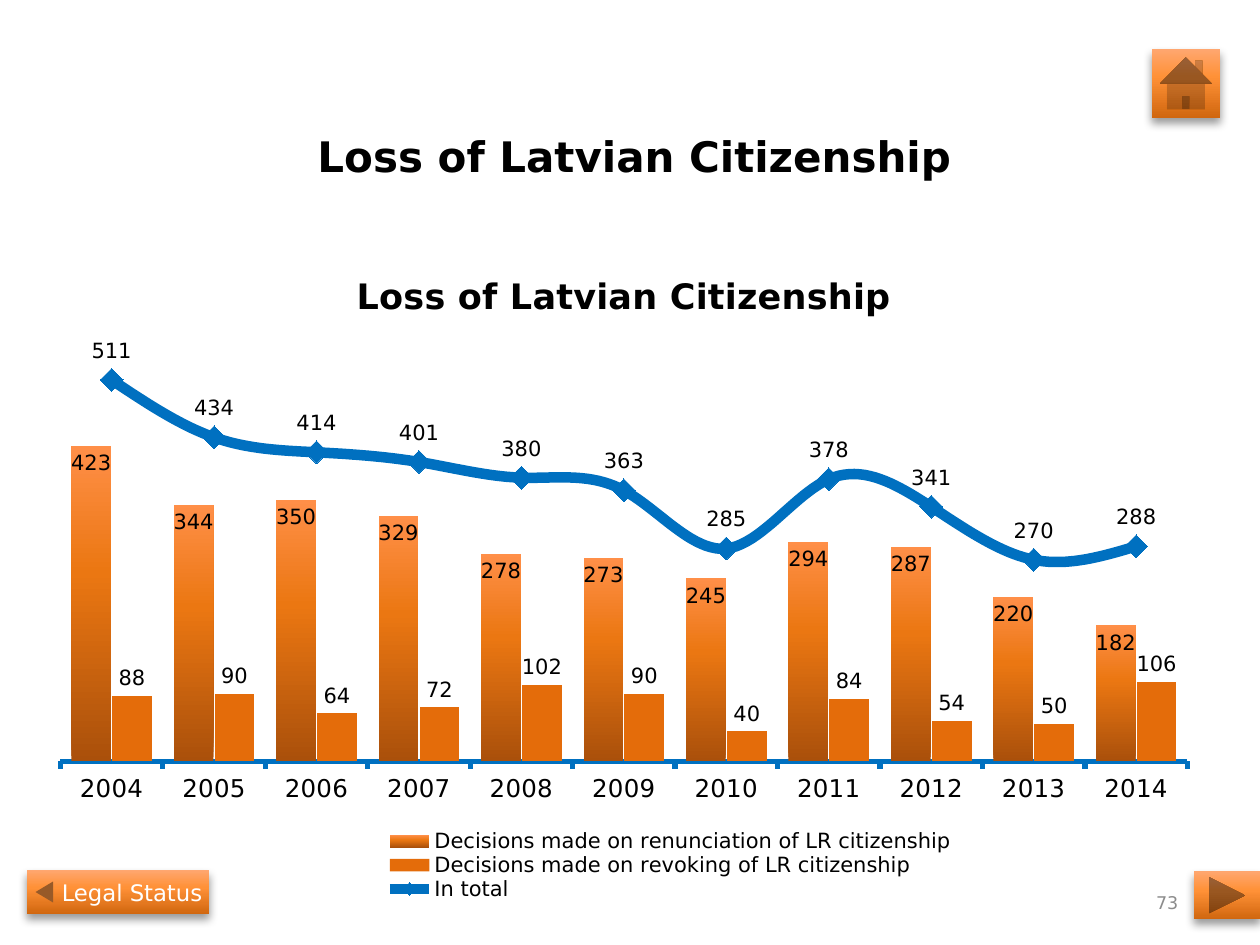
"""Build the slide on loss of Latvian citizenship, 2004 to 2014."""
from copy import deepcopy
from dataclasses import dataclass

from lxml.etree import SubElement
from pptx import Presentation
from pptx.chart.chart import Chart
from pptx.chart.data import CategoryChartData
from pptx.dml.color import RGBColor
from pptx.dml.fill import FillFormat
from pptx.enum.chart import (XL_CHART_TYPE, XL_LABEL_POSITION, XL_LEGEND_POSITION,
                             XL_MARKER_STYLE, XL_TICK_MARK)
from pptx.enum.shapes import MSO_SHAPE
from pptx.enum.text import MSO_ANCHOR, MSO_AUTO_SIZE, PP_ALIGN
from pptx.oxml import parse_xml
from pptx.oxml.ns import nsdecls, qn
from pptx.slide import Slide
from pptx.text.text import Font
from pptx.util import Pt

FONT = "DejaVu Sans"
HEADING = "Loss of Latvian Citizenship"
COLORS = {
    "text": "000000", "white": "FFFFFF", "number": "8C8C8C",
    "total": "0070C0", "revoking": "E46C0A", "arrow": "985A28",
}
BUTTON_GRADIENT = ((0, "D1670F"), (0.6, "FF9137"), (1, "FFA770"))
RENUNCIATION_GRADIENT = ((0, "AA500B"), (0.6, "EB7712"), (1, "FF8F48"))


@dataclass(frozen=True)
class Measure:
    name: str
    values: tuple[int, ...]
    label_position: XL_LABEL_POSITION


@dataclass(frozen=True)
class Button:
    preset: MSO_SHAPE
    box: tuple[float, float, float, float]
    caption: str = ""


YEARS = [str(year) for year in range(2004, 2015)]
MEASURES = (
    Measure("Decisions made on renunciation of LR citizenship",
            (423, 344, 350, 329, 278, 273, 245, 294, 287, 220, 182),
            XL_LABEL_POSITION.INSIDE_END),
    Measure("Decisions made on revoking of LR citizenship",
            (88, 90, 64, 72, 102, 90, 40, 84, 54, 50, 106),
            XL_LABEL_POSITION.OUTSIDE_END),
    Measure("In total",
            (511, 434, 414, 401, 380, 363, 285, 378, 341, 270, 288),
            XL_LABEL_POSITION.ABOVE),
)
BUTTONS = (
    Button(MSO_SHAPE.ACTION_BUTTON_HOME, (658.1, 28.1, 39.2, 39.2)),
    Button(MSO_SHAPE.ACTION_BUTTON_CUSTOM, (15.3, 497.2, 104.2, 25), "Legal Status"),
    Button(MSO_SHAPE.ACTION_BUTTON_FORWARD_OR_NEXT, (682.3, 497.9, 37.7, 27.4)),
)


def rgb(key: str) -> RGBColor:
    """Return a named colour."""
    return RGBColor.from_string(COLORS[key])


def style_font(font: Font, size: float, color: str = "text", bold: bool = False) -> None:
    """Apply the slide typeface with a size and colour."""
    font.name, font.size, font.bold = FONT, Pt(size), bold
    font.color.rgb = rgb(color)


def fill_gradient(fill: FillFormat, element, stops: tuple) -> None:
    """Fill upwards with a gradient of three stops."""
    fill.gradient()
    fill.gradient_angle = 90
    stop_list = next(element.iter(qn("a:gsLst")))
    stop_list.append(deepcopy(stop_list[-1]))
    for stop, (position, color) in zip(fill.gradient_stops, stops):
        stop.position = position
        stop.color.rgb = RGBColor.from_string(color)


def set_layout(parent, index: int, inner: bool, **percents: float) -> None:
    """Give a chart part a manual layout in percent of the chart."""
    for old in parent.findall(qn("c:layout")):
        parent.remove(old)
    layout = parse_xml(f"<c:layout {nsdecls('c')}><c:manualLayout/></c:layout>")
    settings = {"layoutTarget": "inner"} if inner else {}
    settings |= {"xMode": "edge", "yMode": "edge"}
    settings |= {tag: percent / 100 for tag, percent in percents.items()}
    for tag, value in settings.items():
        SubElement(layout[0], qn(f"c:{tag}")).set("val", str(value))
    parent.insert(index, layout)


def move_total_to_line(chart: Chart) -> None:
    """Move the last column series to a line plot on the same axes."""
    columns = chart.plots[0]._element
    total = columns.findall(qn("c:ser"))[-1]
    for invert in total.findall(qn("c:invertIfNegative")):
        total.remove(invert)
    line = parse_xml(
        f'<c:lineChart {nsdecls("c")}><c:grouping val="standard"/>'
        '<c:varyColors val="0"/><c:marker val="1"/></c:lineChart>')
    line.insert(2, total)
    line.extend(deepcopy(axis) for axis in columns.findall(qn("c:axId")))
    columns.addnext(line)


def style_axes(chart: Chart) -> None:
    """Show the years on a thick axis and hide the values."""
    years, counts = chart.category_axis, chart.value_axis
    years.major_tick_mark = XL_TICK_MARK.OUTSIDE
    years.has_major_gridlines = False
    style_font(years.tick_labels.font, 14)
    years.format.line.color.rgb = rgb("total")
    years.format.line.width = Pt(3)
    counts.visible = counts.has_major_gridlines = False
    counts.minimum_scale, counts.maximum_scale = 0, 600


def add_citizenship_chart(slide: Slide) -> None:
    """Add the columns of decisions with the line of totals."""
    data = CategoryChartData()
    data.categories = YEARS
    for measure in MEASURES:
        data.add_series(measure.name, measure.values)
    chart = slide.shapes.add_chart(
        XL_CHART_TYPE.COLUMN_CLUSTERED, Pt(23.2), Pt(141), Pt(666.7), Pt(378), data).chart
    style_font(chart.font, 18)
    chart.has_title = True
    heading = chart.chart_title.text_frame
    heading.text = HEADING
    style_font(heading.paragraphs[0].font, 20, bold=True)
    chart.chart_title.include_in_layout = False

    move_total_to_line(chart)
    columns = chart.plots[0]
    columns.gap_width, columns.overlap, columns.vary_by_categories = 55, -3, False
    renunciation, revoking, total = (series for plot in chart.plots for series in plot.series)
    fill_gradient(renunciation.format.fill, renunciation._element, RENUNCIATION_GRADIENT)
    revoking.format.fill.solid()
    revoking.format.fill.fore_color.rgb = rgb("revoking")
    total.smooth = True
    total.format.line.color.rgb = rgb("total")
    total.format.line.width = Pt(6)
    total.marker.style, total.marker.size = XL_MARKER_STYLE.DIAMOND, 13
    total.marker.format.fill.solid()
    total.marker.format.fill.fore_color.rgb = rgb("revoking")
    total.marker.format.line.color.rgb = rgb("total")
    for series, measure in zip((renunciation, revoking, total), MEASURES):
        labels = series.data_labels
        labels.show_value, labels.position = True, measure.label_position
        style_font(labels.font, 12)

    style_axes(chart)
    chart.has_legend = True
    legend = chart.legend
    legend.position, legend.include_in_layout = XL_LEGEND_POSITION.BOTTOM, False
    style_font(legend.font, 12)
    set_layout(legend._element, 1, False, x=29, y=88, w=50, h=10.6)
    set_layout(columns._element.getparent(), 0, True, x=1.7, y=10.1, w=96.6, h=67.7)


def add_button(slide: Slide, button: Button) -> None:
    """Add a navigation button, with an arrow before any caption."""
    shape = slide.shapes.add_shape(button.preset, *map(Pt, button.box))
    fill_gradient(shape.fill, shape._element, BUTTON_GRADIENT)
    shape.line.fill.background()
    shape._element.spPr.append(parse_xml(
        f'<a:effectLst {nsdecls("a")}><a:outerShdw blurRad="{Pt(5.2)}" dist="{Pt(3)}" '
        f'dir="5400000" rotWithShape="0"><a:srgbClr val="{COLORS["text"]}">'
        '<a:alpha val="40000"/></a:srgbClr></a:outerShdw></a:effectLst>'))
    if button.caption:
        frame = shape.text_frame
        frame.text, frame.word_wrap = button.caption, False
        frame.vertical_anchor = MSO_ANCHOR.MIDDLE
        frame.margin_left, frame.margin_right = Pt(18), Pt(2)
        frame.paragraphs[0].alignment = PP_ALIGN.CENTER
        style_font(frame.paragraphs[0].font, 13, "white")
        left, top, _, height = button.box
        arrow = slide.shapes.add_shape(
            MSO_SHAPE.ISOSCELES_TRIANGLE, Pt(left + 4), Pt(top + height / 2 - 5), Pt(12), Pt(10))
        arrow.rotation = 270
        arrow.shadow.inherit = False
        arrow.fill.solid()
        arrow.fill.fore_color.rgb = rgb("arrow")
        arrow.line.fill.background()


def add_heading(slide: Slide) -> None:
    """Fill and place the title placeholder."""
    title = slide.shapes.title
    title.left, title.top, title.width, title.height = map(Pt, (174.2, 26.6, 505.4, 80.6))
    title.text = HEADING
    frame = title.text_frame
    frame.vertical_anchor, frame.auto_size = MSO_ANCHOR.BOTTOM, MSO_AUTO_SIZE.NONE
    frame.paragraphs[0].alignment = PP_ALIGN.LEFT
    style_font(frame.paragraphs[0].font, 24, bold=True)


def add_page_number(slide: Slide) -> None:
    """Add the page number at the lower right."""
    frame = slide.shapes.add_textbox(*map(Pt, (646.6, 501.1, 33.8, 28.8))).text_frame
    frame.word_wrap, frame.vertical_anchor = True, MSO_ANCHOR.MIDDLE
    frame.text = "73"
    frame.paragraphs[0].alignment = PP_ALIGN.RIGHT
    style_font(frame.paragraphs[0].font, 10, "number")


deck = Presentation()
deck.slide_width, deck.slide_height = Pt(720), Pt(540)
slide = deck.slides.add_slide(deck.slide_layouts[5])
add_heading(slide)
add_citizenship_chart(slide)
add_page_number(slide)
for button in BUTTONS:
    add_button(slide, button)
deck.save("out.pptx")
